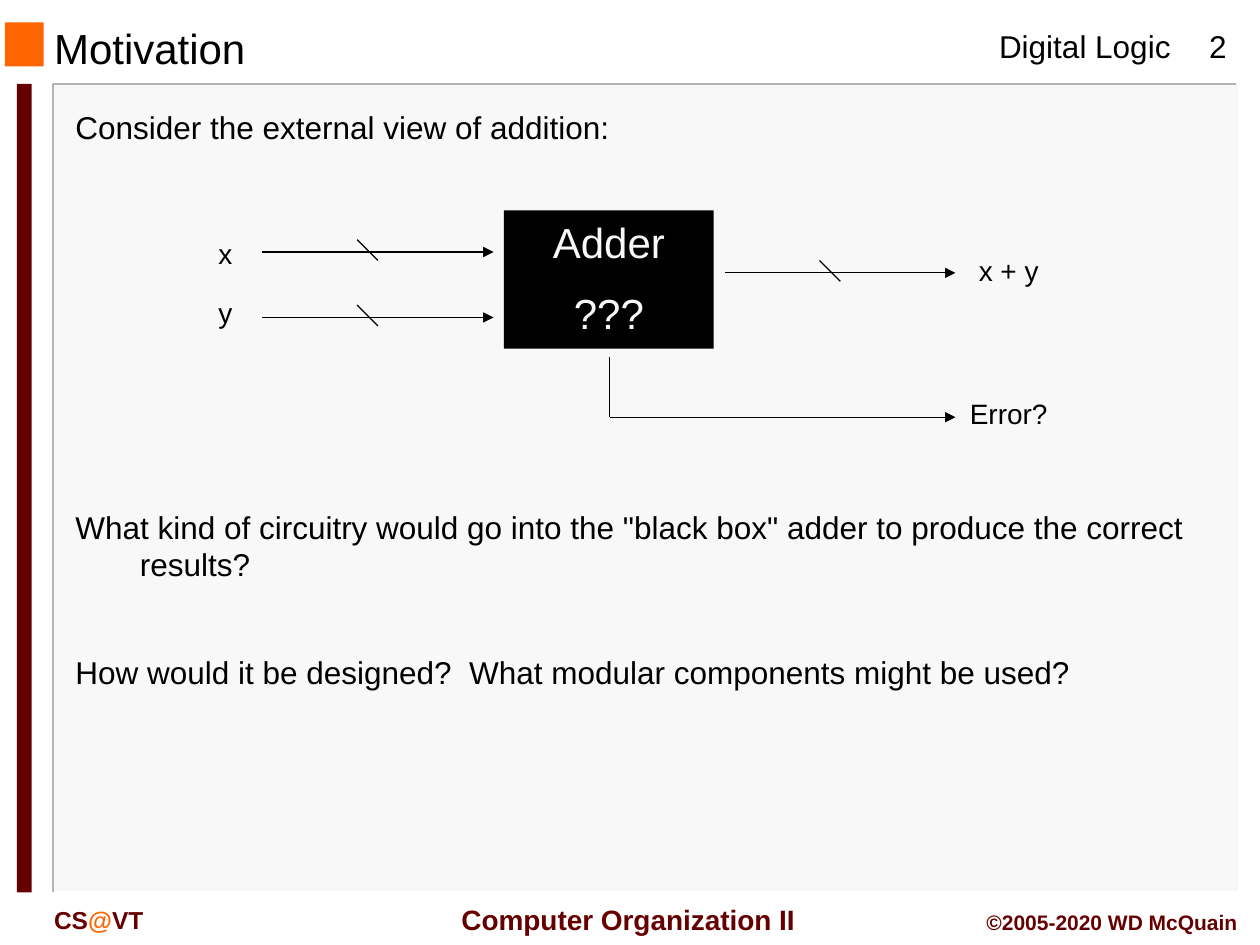
from dataclasses import dataclass

import pptx
import pptx.dml.color
import pptx.enum.shapes
import pptx.enum.text
import pptx.oxml.ns
import pptx.util
from lxml import etree

Cm, Pt = pptx.util.Cm, pptx.util.Pt
RGBColor = pptx.dml.color.RGBColor
PP_ALIGN = pptx.enum.text.PP_ALIGN
MSO_ANCHOR = pptx.enum.text.MSO_ANCHOR
qn = pptx.oxml.ns.qn

BLACK = RGBColor(0x00, 0x00, 0x00)
WHITE = RGBColor(0xFF, 0xFF, 0xFF)
PALE = RGBColor(0xF8, 0xF8, 0xF8)
GREY = RGBColor(0xB2, 0xB2, 0xB2)
ORANGE = RGBColor(0xFF, 0x66, 0x00)
MAROON = RGBColor(0x66, 0x00, 0x00)


@dataclass
class Box:
    """Place and size in centimetres."""
    x: float
    y: float
    w: float
    h: float

    def emu(self) -> tuple:
        """Give the box as lengths."""
        return Cm(self.x), Cm(self.y), Cm(self.w), Cm(self.h)


@dataclass
class Wire:
    """A horizontal signal arrow, with or without a bus slash."""
    x1: float
    x2: float
    y: float
    slash: bool = True


@dataclass
class Edge:
    """An open outline of the content panel."""
    points: list
    color: RGBColor


def write(sp, text, size=18, color=BLACK, bold=False, align=PP_ALIGN.LEFT,
          anchor=MSO_ANCHOR.TOP, wrap=True, hang=0.0, gap=None, accents=None):
    """Write text line by line; accents maps a character to its colour."""
    accents = accents or {}
    tf = sp.text_frame
    tf.word_wrap, tf.vertical_anchor = wrap, anchor
    for i, line in enumerate(text.split("\n")):
        p = tf.add_paragraph() if i else tf.paragraphs[0]
        p.alignment = align
        pPr = p._p.get_or_add_pPr()
        if hang:
            pPr.set("marL", str(Cm(hang)))
            pPr.set("indent", str(-Cm(hang)))
        if i and gap:
            p.space_before = Pt(gap)
        else:
            before = etree.SubElement(pPr, qn("a:spcBef"))
            etree.SubElement(before, qn("a:spcPct")).set("val", "50000")
        parts = [line]
        for mark in accents:
            head, _, rest = line.partition(mark)
            parts = [head, mark, rest]
        for part in parts:
            r = p.add_run()
            r.text = part
            r.font.name, r.font.size, r.font.bold = "Arial", Pt(size), bold
            r.font.color.rgb = accents.get(part, color)


def add_text(s, box: Box, text: str, **fmt):
    """Add a text box."""
    write(s.shapes.add_textbox(*box.emu()), text, **fmt)


def add_rect(s, box: Box, color: RGBColor):
    """Add a plain filled rectangle."""
    sp = s.shapes.add_shape(pptx.enum.shapes.MSO_SHAPE.RECTANGLE, *box.emu())
    sp.shadow.inherit = False
    sp.fill.solid()
    sp.fill.fore_color.rgb = color
    sp.line.fill.background()
    return sp


def add_edge(s, edge: Edge):
    """Add an unfilled open outline."""
    start, *rest = [(Cm(x), Cm(y)) for x, y in edge.points]
    builder = s.shapes.build_freeform(*start)
    builder.add_line_segments(rest, close=False)
    sp = builder.convert_to_shape()
    sp.shadow.inherit = False
    sp.fill.background()
    sp.line.color.rgb, sp.line.width = edge.color, Pt(1)


def add_line(s, x1: float, y1: float, x2: float, y2: float, arrow: bool = False):
    """Add a thin black line, with or without an arrowhead at its end."""
    sp = s.shapes.add_connector(pptx.enum.shapes.MSO_CONNECTOR.STRAIGHT,
                                Cm(x1), Cm(y1), Cm(x2), Cm(y2))
    sp.line.color.rgb, sp.line.width = BLACK, Pt(0.75)
    if arrow:
        etree.SubElement(sp.line._get_or_add_ln(), qn("a:tailEnd")).set("type", "triangle")
    etree.SubElement(sp._element.spPr, qn("a:effectLst"))


def add_wire(s, wire: Wire):
    """Add a signal arrow and its bus slash."""
    add_line(s, wire.x1, wire.y, wire.x2, wire.y, arrow=True)
    if wire.slash:
        x, y = wire.x1 + 1.91, wire.y - 0.25
        add_line(s, x, y, x + 0.42, y + 0.42)


LEFT, TOP, RIGHT, BOTTOM = 1.07, 1.7, 24.92, 17.98
EDGES = [
    Edge([(RIGHT, TOP), (LEFT, TOP), (LEFT, BOTTOM)], GREY),
    Edge([(RIGHT + 0.05, TOP), (RIGHT + 0.05, BOTTOM), (LEFT + 0.05, BOTTOM)], WHITE),
]
WIRES = [
    Wire(5.29, 9.95, 5.08),
    Wire(5.29, 9.95, 6.4),
    Wire(14.61, 19.26, 5.5),
    Wire(12.29, 19.26, 8.41, slash=False),
]
LABELS = {
    "x": Box(3.81, 4.65, 1.47, 0.94),
    "y": Box(3.81, 5.84, 1.47, 0.94),
    "x + y": Box(18.85, 4.98, 2.97, 0.94),
    "Error?": Box(18.85, 7.87, 2.97, 0.94),
}
QUESTIONS = ("What kind of circuitry would go into the \"black box\" adder to produce "
             "the correct results?\n"
             "How would it be designed?  What modular components might be used?")


def main():
    """Build the slide and save it."""
    prs = pptx.Presentation()
    prs.slide_width, prs.slide_height = Cm(25.4), Cm(19.05)
    s = prs.slides.add_slide(prs.slide_layouts[6])

    add_rect(s, Box(1.09, 1.7, 23.88, 16.28), PALE)
    for edge in EDGES:
        add_edge(s, edge)
    add_rect(s, Box(0.1, 0.45, 0.78, 0.89), ORANGE)
    add_rect(s, Box(0.34, 1.69, 0.3, 16.3), MAROON)

    add_text(s, Box(19.89, 0.43, 4.14, 1.02), "Digital Logic", wrap=False)
    add_text(s, Box(23.7, 0.43, 1.7, 1.02), "2", align=PP_ALIGN.CENTER)
    add_text(s, Box(8.92, 18.06, 7.49, 0.94), "Computer Organization II", size=16,
             color=MAROON, bold=True, align=PP_ALIGN.CENTER,
             anchor=MSO_ANCHOR.MIDDLE, wrap=False)
    add_text(s, Box(0.84, 18.11, 3.81, 0.84), "CS@VT", size=14, color=MAROON,
             bold=True, accents={"@": ORANGE})
    add_text(s, Box(18.85, 18.21, 6.35, 0.76), "©2005-2020 WD McQuain", size=12,
             color=MAROON, bold=True, align=PP_ALIGN.RIGHT)

    add_text(s, Box(0.84, 0.48, 16.08, 0.97), "Motivation", size=24,
             anchor=MSO_ANCHOR.MIDDLE)
    add_text(s, Box(1.27, 2.06, 23.5, 1.02), "Consider the external view of addition:",
             hang=1.3)
    add_text(s, Box(1.27, 10.11, 23.5, 4.11), QUESTIONS, hang=1.3, gap=40)

    adder = add_rect(s, Box(10.16, 4.24, 4.23, 2.79), BLACK)
    write(adder, "Adder\n???", size=24, color=PALE, align=PP_ALIGN.CENTER)
    for text, box in LABELS.items():
        add_text(s, box, text, size=16, align=PP_ALIGN.CENTER)
    for wire in WIRES:
        add_wire(s, wire)
    add_line(s, 12.29, 7.19, 12.29, 8.41)

    prs.save("out.pptx")


if __name__ == "__main__":
    main()
